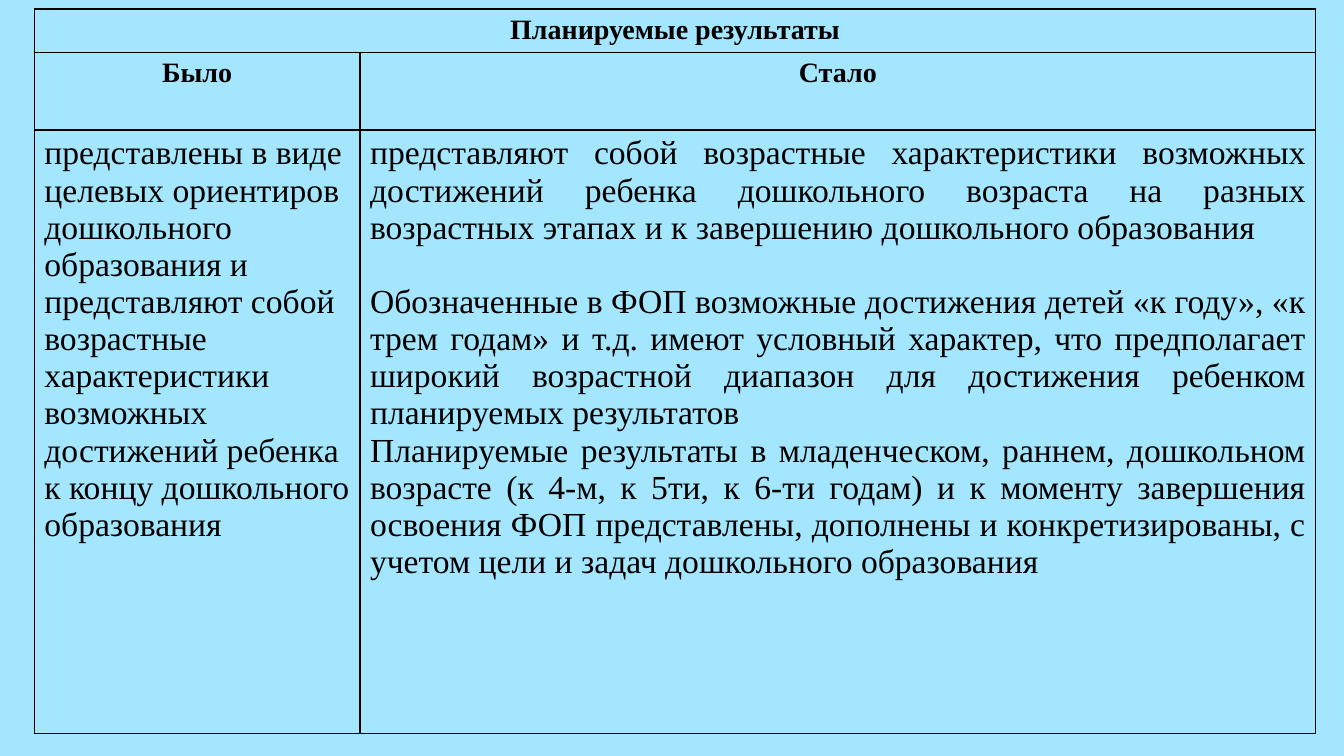
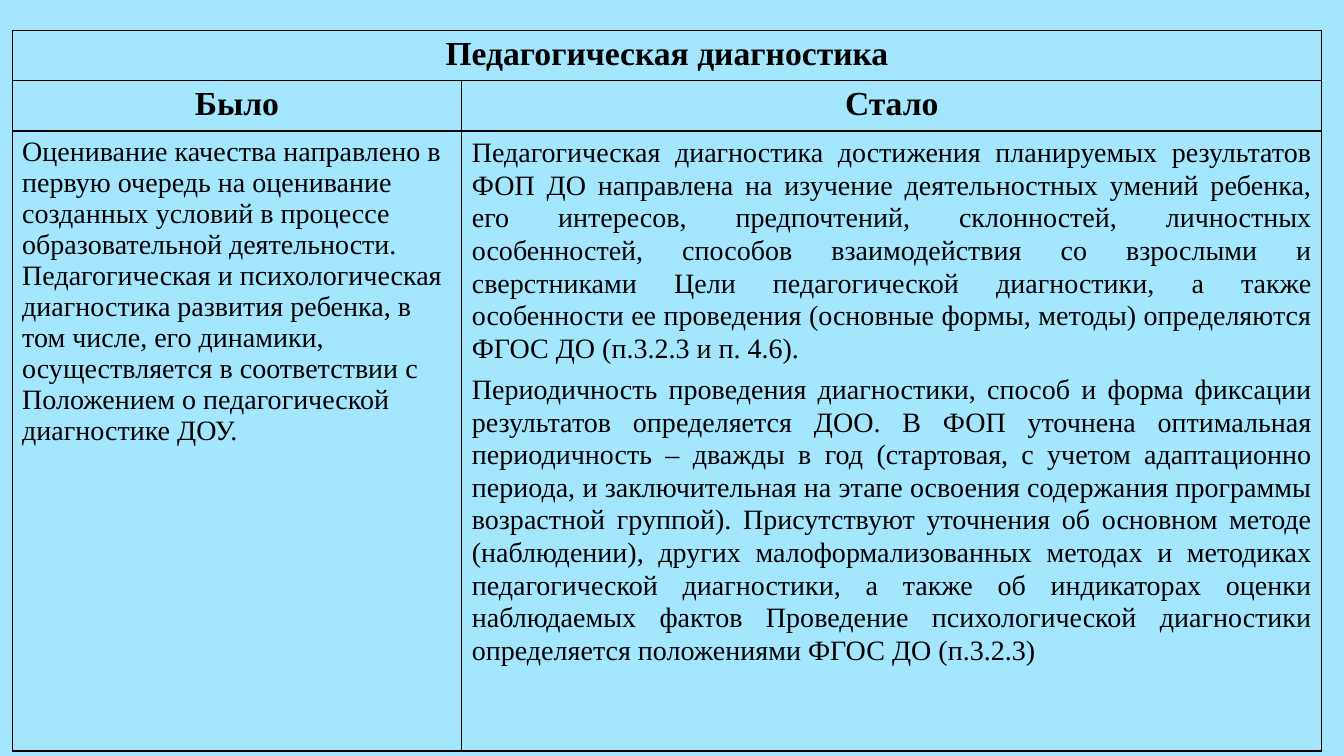
"""Builds two slides that compare the former and the new programme in tables."""
from lxml.etree import SubElement
from pptx import Presentation
from pptx.dml.color import RGBColor
from pptx.enum.text import PP_ALIGN
from pptx.oxml import parse_xml
from pptx.oxml.ns import nsdecls, qn
from pptx.util import Inches, Pt

SKY = RGBColor(0xA4, 0xE6, 0xFE)
BLACK = RGBColor(0, 0, 0)
FONT = "Times New Roman"
BORDER_WIDTH = Pt(1)
SUBHEADS = ("Было", "Стало")

TABLES = [
    {
        "title": "Планируемые результаты",
        "place": (0.34, 0.09),
        "columns": (3.23, 9.48),
        "rows": (0.43, 0.77, 5.99),
        "head_size": 20,
        "body_size": 24,
        "before": [
            ("представлены в виде целевых ориентиров дошкольного образования и "
             "представляют собой возрастные характеристики возможных достижений "
             "ребенка к концу дошкольного образования", {}),
        ],
        "after": [
            ("представляют собой возрастные характеристики возможных достижений "
             "ребенка дошкольного возраста на разных возрастных этапах и к "
             "завершению дошкольного образования", {"space_after": Pt(26.5)}),
            ("Обозначенные в ФОП возможные достижения детей «к году», «к трем "
             "годам» и т.д. имеют условный характер, что предполагает широкий "
             "возрастной диапазон для достижения ребенком планируемых "
             "результатов", {}),
            ("Планируемые результаты в младенческом, раннем, дошкольном возрасте "
             "(к 4-м, к 5ти, к 6-ти годам) и к моменту завершения освоения ФОП "
             "представлены, дополнены и конкретизированы, с учетом цели и задач "
             "дошкольного образования", {}),
        ],
    },
    {
        "title": "Педагогическая диагностика",
        "place": (0.12, 0.3),
        "columns": (4.46, 8.53),
        "rows": (0.5, 0.5, 6.15),
        "head_size": 24,
        "body_size": 20,
        "before": [
            ("Оценивание качества направлено в первую очередь на оценивание "
             "созданных условий в процессе образовательной деятельности.", {}),
            ("Педагогическая и психологическая диагностика развития ребенка, в "
             "том числе, его динамики, осуществляется в соответствии с "
             "Положением о педагогической диагностике ДОУ.", {}),
        ],
        "after": [
            ("Педагогическая диагностика достижения планируемых результатов ФОП "
             "ДО направлена на изучение деятельностных умений ребенка, его "
             "интересов, предпочтений, склонностей, личностных особенностей, "
             "способов взаимодействия со взрослыми и сверстниками Цели "
             "педагогической диагностики, а также особенности ее проведения "
             "(основные формы, методы) определяются ФГОС ДО (п.3.2.3 и п. 4.6).",
             {"line_spacing": 1.05, "space_after": Pt(6)}),
            ("Периодичность проведения диагностики, способ и форма фиксации "
             "результатов определяется ДОО. В ФОП уточнена оптимальная "
             "периодичность – дважды в год (стартовая, с учетом адаптационно "
             "периода, и заключительная на этапе освоения содержания программы "
             "возрастной группой). Присутствуют уточнения об основном методе "
             "(наблюдении), других малоформализованных методах и методиках "
             "педагогической диагностики, а также об индикаторах оценки "
             "наблюдаемых фактов Проведение психологической диагностики "
             "определяется положениями ФГОС ДО (п.3.2.3)",
             {"line_spacing": 1.05, "space_after": Pt(0.5)}),
        ],
    },
]


def set_attributes(target, values):
    """Set each named value on the target."""
    for name, value in values.items():
        setattr(target, name, value)


def style_cell(cell):
    """Give the cell the slide colour and thin black borders."""
    cell.fill.solid()
    cell.fill.fore_color.rgb = SKY
    properties = cell._tc.get_or_add_tcPr()
    for index, side in enumerate("LRTB"):
        line = parse_xml(f'<a:ln{side} {nsdecls("a")} w="{BORDER_WIDTH}"/>')
        solid = SubElement(line, qn("a:solidFill"))
        SubElement(solid, qn("a:srgbClr"), val=str(BLACK))
        properties.insert(index, line)


def write_cell(cell, paragraphs, size, bold, alignment):
    """Fill the cell with formatted paragraphs."""
    frame = cell.text_frame
    for index, (text, spacing) in enumerate(paragraphs):
        paragraph = frame.add_paragraph() if index else frame.paragraphs[0]
        set_attributes(paragraph, {"alignment": alignment, **spacing})
        run = paragraph.add_run()
        run.text = text
        set_attributes(run.font, {"name": FONT, "size": Pt(size), "bold": bold})
        run.font.color.rgb = BLACK


def add_comparison(slide, content):
    """Add one table with a title row, two subheads and two texts."""
    columns, rows = content["columns"], content["rows"]
    box = (*content["place"], sum(columns), sum(rows))
    table = slide.shapes.add_table(len(rows), len(columns), *map(Inches, box)).table
    set_attributes(table, {"first_row": False, "horz_banding": False})
    for column, width in zip(table.columns, columns):
        column.width = Inches(width)
    for row, height in zip(table.rows, rows):
        row.height = Inches(height)
    for cell in table.iter_cells():
        style_cell(cell)
    table.cell(0, 0).merge(table.cell(0, 1))

    head = (content["head_size"], True, PP_ALIGN.CENTER)
    write_cell(table.cell(0, 0), [(content["title"], {})], *head)
    bodies = (("before", PP_ALIGN.LEFT), ("after", PP_ALIGN.JUSTIFY))
    for index, (subhead, (key, alignment)) in enumerate(zip(SUBHEADS, bodies)):
        write_cell(table.cell(1, index), [(subhead, {})], *head)
        write_cell(table.cell(2, index), content[key],
                   content["body_size"], False, alignment)


def main():
    """Build and save the presentation."""
    presentation = Presentation()
    set_attributes(presentation, {"slide_width": Inches(13.33),
                                  "slide_height": Inches(7.5)})
    background = presentation.slide_master.background.fill
    background.solid()
    background.fore_color.rgb = SKY
    for content in TABLES:
        slide = presentation.slides.add_slide(presentation.slide_layouts[6])
        add_comparison(slide, content)
    presentation.save("out.pptx")


if __name__ == "__main__":
    main()
